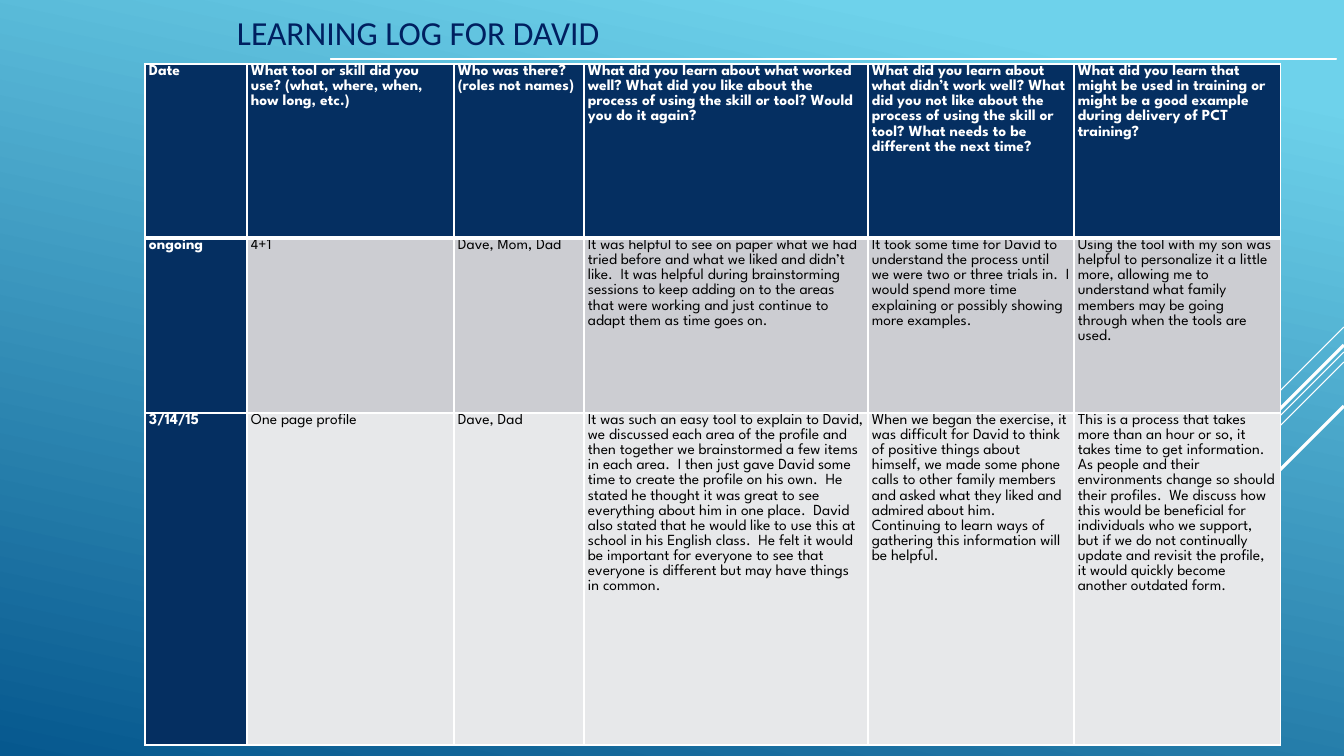
from pptx import Presentation
from pptx.dml.color import RGBColor as Rgb
from pptx.enum.shapes import MSO_CONNECTOR as Conn, MSO_SHAPE as Shape
from pptx.enum.text import MSO_ANCHOR as Anchor
from pptx.oxml import parse_xml
from pptx.oxml.ns import nsdecls
from pptx.util import Emu, Pt

HUES = {"white": "FFFFFF", "black": "000000", "navy": "052F61",
        "title": "002060", "sky": "6ED2EB", "deep": "06588E",
        "grey": "CCCDD2", "pale": "E7E8EA"}


class Board:
    """Holds the style and the current slide; lengths are in px."""
    scale = 914400 / 100.8
    font = "League Spartan"

    def __init__(self, deck):
        deck.slide_width, deck.slide_height = self.px(1344), self.px(756)
        self.slide = deck.slides.add_slide(deck.slide_layouts[6])
        self.shapes = self.slide.shapes

    def px(self, n):
        return Emu(round(n * self.scale))

    def box(self, *nums):
        return [self.px(n) for n in nums]

    def hue(self, name):
        return Rgb.from_string(HUES[name])

    def back(self, stops, angle):
        fill = self.slide.background.fill
        fill.gradient()
        fill.gradient_angle = 360 - angle
        for stop, (pos, name) in zip(fill.gradient_stops, stops):
            stop.position = pos
            stop.color.rgb = self.hue(name)

    def line(self, ends, width):
        wire = self.shapes.add_connector(Conn.STRAIGHT, *self.box(*ends))
        wire.line.color.rgb = self.hue("white")
        wire.line.width = Pt(width)
        wire._element.spPr.append(parse_xml(f"<a:effectLst {nsdecls('a')}/>"))

    def rule(self, *place):
        bar = self.shapes.add_shape(Shape.RECTANGLE, *self.box(*place))
        bar.shadow.inherit = False
        bar.fill.solid()
        bar.fill.fore_color.rgb = self.hue("black")
        bar.line.color.rgb = self.hue("white")
        bar.line.width = Pt(0.75)

    def run(self, para, text, size, font, name, bold=False):
        run = para.add_run()
        run.text = text
        run.font.size, run.font.name, run.font.bold = Pt(size), font, bold
        run.font.color.rgb = self.hue(name)

    def title(self, text, *place):
        frame = self.shapes.add_textbox(*self.box(*place)).text_frame
        frame.word_wrap = True
        frame.vertical_anchor = Anchor.MIDDLE
        self.run(frame.paragraphs[0], text, 24, "Calibri", "title")

    def edge(self, cell, widths):
        props = cell._tc.get_or_add_tcPr()
        for i, (side, width) in enumerate(zip("LRTB", widths)):
            props.insert(i, parse_xml(
                f'<a:ln{side} {nsdecls("a")} w="{Pt(width)}"><a:solidFill>'
                f'<a:srgbClr val="{HUES["white"]}"/></a:solidFill></a:ln{side}>'))

    def cell(self, cell, text, fill, head, widths):
        cell.fill.solid()
        cell.fill.fore_color.rgb = self.hue(fill)
        cell.margin_left = cell.margin_right = self.px(4)
        cell.margin_top = cell.margin_bottom = 0
        para = cell.text_frame.paragraphs[0]
        para.line_spacing = 1.07
        self.run(para, text, 11, self.font, "white" if head else "black", head)
        self.edge(cell, widths)

    def table(self, left, top, cols, rows, texts, fills):
        grid = self.shapes.add_table(len(rows), len(cols), *self.box(
            left, top, sum(cols), sum(rows))).table
        for col, width in zip(grid.columns, cols):
            col.width = self.px(width)
        for row, height in zip(grid.rows, rows):
            row.height = self.px(height)
        for r, line in enumerate(texts):
            # A thick edge parts the head row from the rest
            widths = (1, 1, 3 if r == 1 else 1, 3 if r == 0 else 1)
            for c, text in enumerate(line):
                head = r == 0 or c == 0
                self.cell(grid.cell(r, c), text,
                          "navy" if head else fills[r], head, widths)


LOG = [
    ["Date",
     "What tool or skill did you use? (what, where, when, how long, etc.)",
     "Who was there? (roles not names)",
     "What did you learn about what worked well? What did you like about the "
     "process of using the skill or tool? Would you do it again?",
     "What did you learn about what didn’t work well? What did you not like "
     "about the process of using the skill or tool? What needs to be "
     "different the next time?",
     "What did you learn that might be used in training or might be a good "
     "example during delivery of PCT training?"],
    ["ongoing", "4+1", "Dave, Mom, Dad",
     "It was helpful to see on paper what we had tried before and what we "
     "liked and didn’t like.  It was helpful during brainstorming sessions to "
     "keep adding on to the areas that were working and just continue to "
     "adapt them as time goes on.",
     "It took some time for David to understand the process until we were two "
     "or three trials in.  I would spend more time explaining or possibly "
     "showing more examples.",
     "Using the tool with my son was helpful to personalize it a little more, "
     "allowing me to understand what family members may be going through when "
     "the tools are used."],
    ["3/14/15", "One page profile", "Dave, Dad",
     "It was such an easy tool to explain to David, we discussed each area of "
     "the profile and then together we brainstormed a few items in each area.  "
     "I then just gave David some time to create the profile on his own.  He "
     "stated he thought it was great to see everything about him in one "
     "place.  David also stated that he would like to use this at school in "
     "his English class.  He felt it would be important for everyone to see "
     "that everyone is different but may have things in common.",
     "When we began the exercise, it was difficult for David to think of "
     "positive things about himself, we made some phone calls to other family "
     "members and asked what they liked and admired about him.  Continuing to "
     "learn ways of gathering this information will be helpful.",
     "This is a process that takes more than an hour or so, it takes time to "
     "get information.  As people and their environments change so should "
     "their profiles.  We discuss how this would be beneficial for "
     "individuals who we support, but if we do not continually update and "
     "revisit the profile, it would quickly become another outdated form."],
]


def main():
    deck = Presentation()
    board = Board(deck)

    # Backdrop with slanted lines from the right edge
    board.back([(0.1, "sky"), (1, "deep")], 102)
    for top, run, width in [(327, 101, 0.75), (352, 329, 0.75),
                            (362, 209, 0.75), (345, 193, 2.25),
                            (406, 140, 2.25)]:
        board.line((1344, top, 1344 - run, top + run), width)

    # Learning log
    board.table(145, 64, [102, 207, 130, 284, 206, 207], [174, 175, 332],
                LOG, ["navy", "grey", "pale"])

    # Title and its rule
    board.rule(331, 59, 1006, 1)
    board.title("LEARNING LOG FOR DAVID", 227, -51, 940, 166)

    deck.save("out.pptx")


if __name__ == "__main__":
    main()
